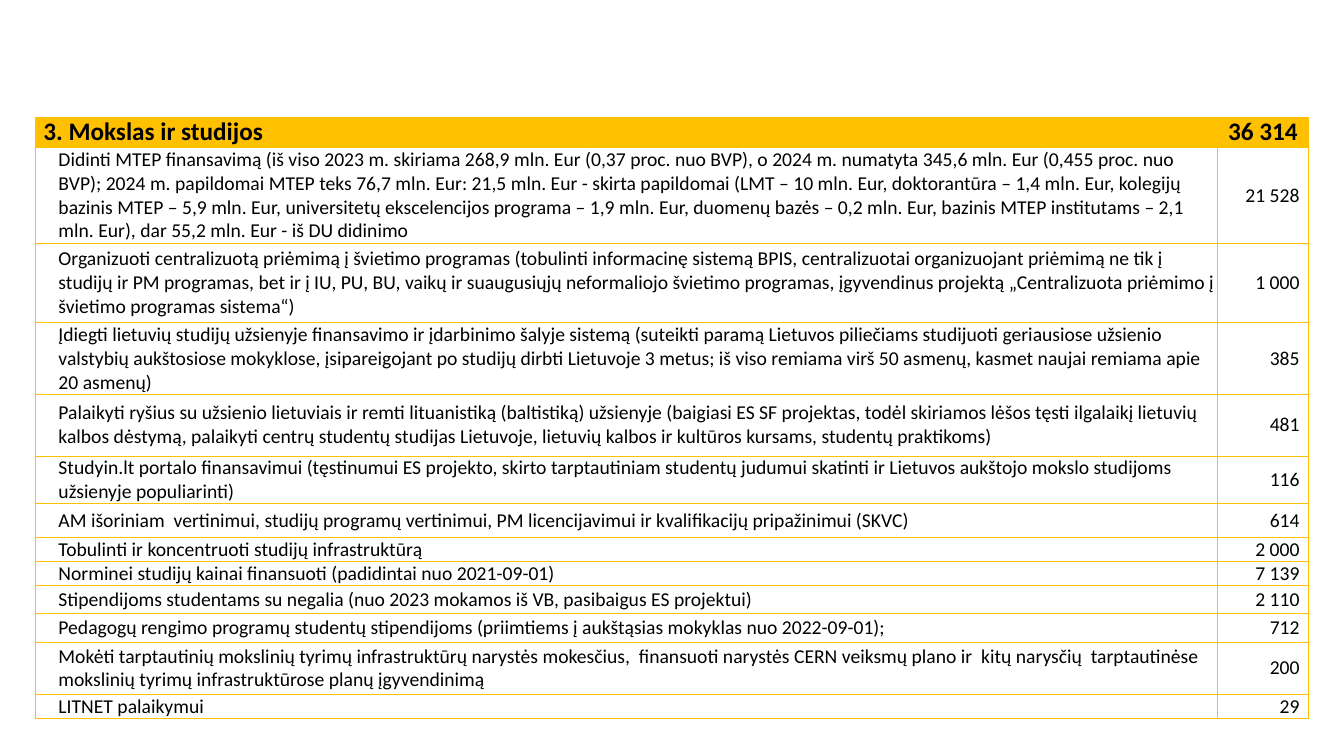
from dataclasses import dataclass

from lxml.etree import SubElement
from pptx import Presentation
from pptx.dml.color import RGBColor
from pptx.enum.text import MSO_ANCHOR, PP_ALIGN
from pptx.oxml.ns import qn
from pptx.util import Inches, Pt


@dataclass(frozen=True)
class Theme:
    """Colours, type sizes and spacing of the slide."""
    font: str = "Calibri"
    accent: str = "FFC000"
    paper: str = "FFFFFF"
    ink: str = "000000"
    heading_size: int = 18
    body_size: int = 14
    border_width: float = 0.5
    heading_indent: float = 0.08
    body_indent: float = 0.23
    heading_end: float = 0.11
    body_end: float = 0.09


THEME = Theme()
SLIDE_WIDTH, SLIDE_HEIGHT = 13.33, 7.5
TABLE_BOX = (0.35, 1.16, 12.63, 5.92)
AMOUNT_SHARE = 0.072

BUDGET = [
    (0.3, "3. Mokslas ir studijos", "36 314"),
    (0.94, "Didinti MTEP finansavimą (iš viso 2023 m. skiriama 268,9 mln. Eur "
     "(0,37 proc. nuo BVP), o 2024 m. numatyta 345,6 mln. Eur (0,455 proc. nuo BVP); "
     "2024 m. papildomai MTEP teks 76,7 mln. Eur: 21,5 mln. Eur - skirta papildomai "
     "(LMT – 10 mln. Eur, doktorantūra – 1,4 mln. Eur, kolegijų bazinis MTEP – 5,9 mln. Eur, "
     "universitetų ekscelencijos programa – 1,9 mln. Eur, duomenų bazės – 0,2 mln. Eur, "
     "bazinis MTEP institutams – 2,1 mln. Eur), dar 55,2 mln. Eur - iš DU didinimo", "21 528"),
    (0.79, "Organizuoti centralizuotą priėmimą į švietimo programas (tobulinti informacinę "
     "sistemą BPIS, centralizuotai organizuojant priėmimą ne tik į studijų ir PM programas, "
     "bet ir į IU, PU, BU, vaikų ir suaugusiųjų neformaliojo švietimo programas, įgyvendinus "
     "projektą „Centralizuota priėmimo į švietimo programas sistema“)", "1 000"),
    (0.7, "Įdiegti lietuvių studijų užsienyje finansavimo ir įdarbinimo šalyje sistemą "
     "(suteikti paramą Lietuvos piliečiams studijuoti geriausiose užsienio valstybių "
     "aukštosiose mokyklose, įsipareigojant po studijų dirbti Lietuvoje 3 metus; iš viso "
     "remiama virš 50 asmenų, kasmet naujai remiama apie 20 asmenų)", "385"),
    (0.61, "Palaikyti ryšius su užsienio lietuviais ir remti lituanistiką (baltistiką) "
     "užsienyje (baigiasi ES SF projektas, todėl skiriamos lėšos tęsti ilgalaikį lietuvių "
     "kalbos dėstymą, palaikyti centrų studentų studijas Lietuvoje, lietuvių kalbos ir "
     "kultūros kursams, studentų praktikoms)", "481"),
    (0.47, "Studyin.lt portalo finansavimui (tęstinumui ES projekto, skirto tarptautiniam "
     "studentų judumui skatinti ir Lietuvos aukštojo mokslo studijoms užsienyje "
     "populiarinti)", "116"),
    (0.34, "AM išoriniam  vertinimui, studijų programų vertinimui, PM licencijavimui ir "
     "kvalifikacijų pripažinimui (SKVC)", "614"),
    (0.23, "Tobulinti ir koncentruoti studijų infrastruktūrą", "2 000"),
    (0.23, "Norminei studijų kainai finansuoti (padidintai nuo 2021-09-01)", "7 139"),
    (0.28, "Stipendijoms studentams su negalia (nuo 2023 mokamos iš VB, pasibaigus ES "
     "projektui)", "2 110"),
    (0.28, "Pedagogų rengimo programų studentų stipendijoms (priimtiems į aukštąsias "
     "mokyklas nuo 2022-09-01);", "712"),
    (0.52, "Mokėti tarptautinių mokslinių tyrimų infrastruktūrų narystės mokesčius,  "
     "finansuoti narystės CERN veiksmų plano ir  kitų narysčių  tarptautinėse mokslinių "
     "tyrimų infrastruktūrose planų įgyvendinimą", "200"),
    (0.23, "LITNET palaikymui", "29"),
]


def add_borders(cell):
    """Draw a thin accent line on all four sides of a cell."""
    properties = cell._tc.get_or_add_tcPr()
    for side in ("a:lnL", "a:lnR", "a:lnT", "a:lnB"):
        line = SubElement(properties, qn(side), w=str(Pt(THEME.border_width)))
        fill = SubElement(line, qn("a:solidFill"))
        SubElement(fill, qn("a:srgbClr"), val=THEME.accent)


def fill_cell(cell, text, is_heading, is_amount):
    """Write and style one cell of the budget table."""
    add_borders(cell)
    cell.fill.solid()
    cell.fill.fore_color.rgb = RGBColor.from_string(THEME.accent if is_heading else THEME.paper)
    cell.vertical_anchor = MSO_ANCHOR.MIDDLE
    indent = THEME.heading_indent if is_heading else THEME.body_indent
    end = THEME.heading_end if is_heading else THEME.body_end
    cell.margin_left = Inches(0 if is_amount else indent)
    cell.margin_right = Inches(end if is_amount else 0)
    cell.margin_top = cell.margin_bottom = 0
    paragraph = cell.text_frame.paragraphs[0]
    paragraph.alignment = PP_ALIGN.RIGHT if is_amount else PP_ALIGN.LEFT
    run = paragraph.add_run()
    run.text = text
    run.font.name = THEME.font
    run.font.size = Pt(THEME.heading_size if is_heading else THEME.body_size)
    run.font.bold = is_heading
    run.font.color.rgb = RGBColor.from_string(THEME.ink)


def add_budget_table(slide, box, budget):
    """Place the budget table in the given box."""
    frame = slide.shapes.add_table(len(budget), 2, *map(Inches, box))
    table = frame.table
    table.horz_banding = False
    for column, share in zip(table.columns, (1 - AMOUNT_SHARE, AMOUNT_SHARE)):
        column.width = Inches(box[2] * share)
    total = sum(height for height, _, _ in budget)
    for index, (height, purpose, amount) in enumerate(budget):
        table.rows[index].height = Inches(box[3] * height / total)
        fill_cell(table.cell(index, 0), purpose, index == 0, False)
        fill_cell(table.cell(index, 1), amount, index == 0, True)


def main():
    """Build the presentation and save it."""
    presentation = Presentation()
    presentation.slide_width = Inches(SLIDE_WIDTH)
    presentation.slide_height = Inches(SLIDE_HEIGHT)
    slide = presentation.slides.add_slide(presentation.slide_layouts[6])
    add_budget_table(slide, TABLE_BOX, BUDGET)
    presentation.save("out.pptx")


if __name__ == "__main__":
    main()
